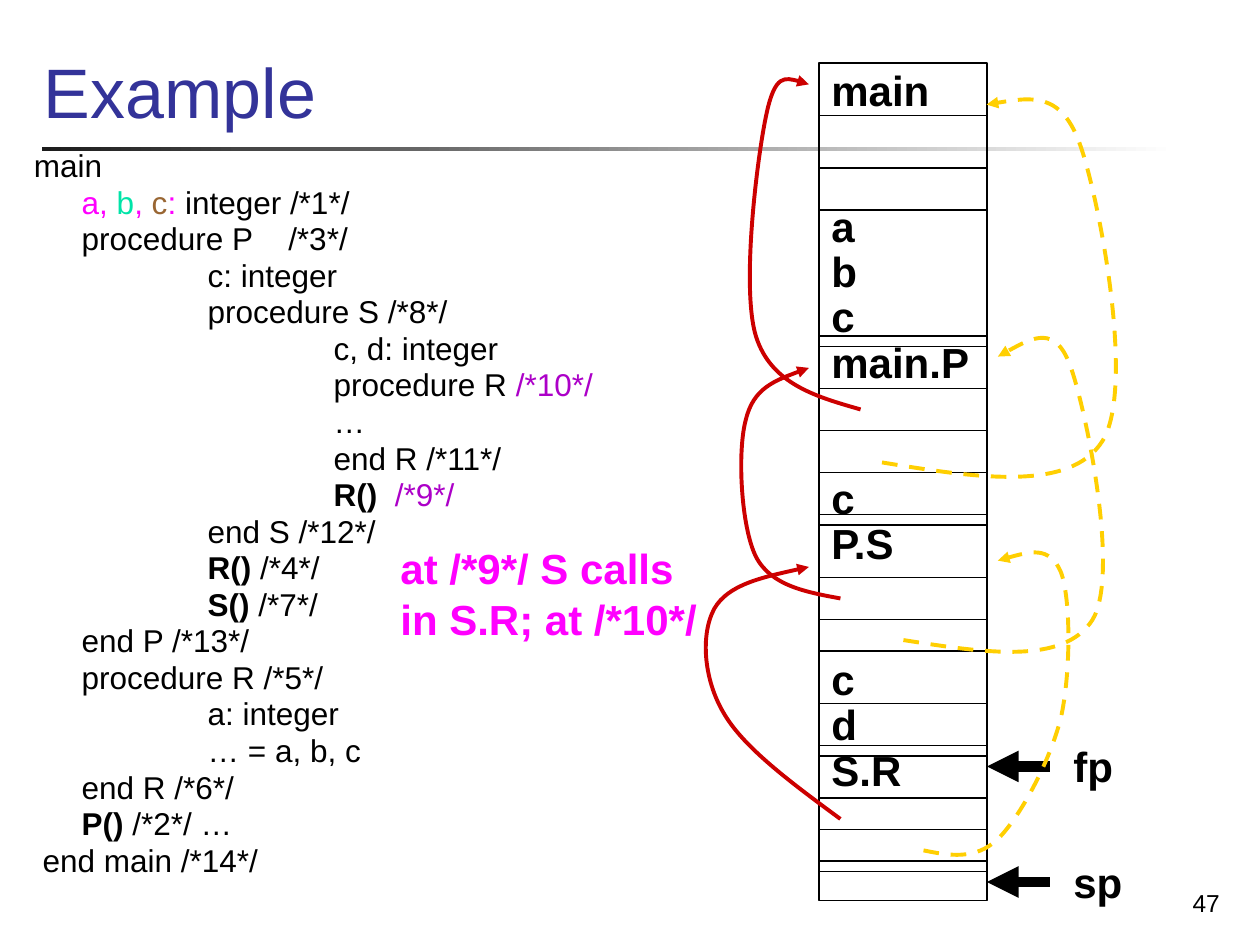
from lxml.etree import SubElement
from pptx import Presentation
from pptx.dml.color import RGBColor
from pptx.enum.dml import MSO_LINE
from pptx.enum.shapes import MSO_CONNECTOR, MSO_SHAPE
from pptx.enum.text import MSO_ANCHOR, PP_ALIGN
from pptx.oxml.ns import qn
from pptx.util import Inches, Pt

BLACK = RGBColor(0x00, 0x00, 0x00)
WHITE = RGBColor(0xFF, 0xFF, 0xFF)
CHARCOAL = RGBColor(0x1C, 0x1C, 0x1C)
NAVY = RGBColor(0x33, 0x33, 0x99)
MAGENTA = RGBColor(0xFF, 0x00, 0xFF)
MINT = RGBColor(0x00, 0xE4, 0xA8)
BROWN = RGBColor(0x99, 0x66, 0x33)
PURPLE = RGBColor(0xAC, 0x00, 0xC8)
RED = RGBColor(0xCC, 0x00, 0x00)
YELLOW = RGBColor(0xFF, 0xCF, 0x01)

# The memory stack sits on a grid of twelfths of an inch
STACK_LEFT, STACK_TOP, STACK_WIDTH, STACK_HEIGHT = 78, 6, 16, 79.8
STACK_RIGHT = STACK_LEFT + STACK_WIDTH
DIVIDER_ROWS = [11, 16, 20, 32, 33, 37, 41, 45, 49, 50, 55, 59, 62, 67,
                71, 72, 76, 79, 82, 83]
STACK_PITCH = 25.9
# (label, empty lines above it)
STACK_LABELS = [("main", 0), ("a", 2), ("b", 0), ("c", 0), ("main.P", 0),
                ("c", 2), ("P.S", 0), ("c", 2), ("d", 0), ("S.R", 0)]
POINTERS = [("fp", 73, 5.83, 0.52), ("sp", 84, 6.75, 0.6)]

# Left margin of each nesting level, in inches
LEVEL_INDENTS = [0, 0.38, 1.38, 2.38]
END_INDENT = 0.07

# (indent, runs); a run is (text, colour, bold, extra letter spacing in points)
CODE = [
    (LEVEL_INDENTS[0], [("main",)]),
    (LEVEL_INDENTS[1], [("a,", MAGENTA), (" b", MINT), (",", MAGENTA),
                        (" c", BROWN), (": ", MAGENTA), ("integer /*1*/",)]),
    (LEVEL_INDENTS[1], [("procedure P",), (" ", BLACK, False, 15), ("/*3*/",)]),
    (LEVEL_INDENTS[2], [("c: integer",)]),
    (LEVEL_INDENTS[2], [("procedure S /*8*/",)]),
    (LEVEL_INDENTS[3], [("c, d: integer",)]),
    (LEVEL_INDENTS[3], [("procedure R ",), ("/*10*/", PURPLE)]),
    (LEVEL_INDENTS[3], [("…",)]),
    (LEVEL_INDENTS[3], [("end R /*11*/",)]),
    (LEVEL_INDENTS[3], [("R()", BLACK, True), (" ", BLACK, True, 5),
                        ("/*9*/", PURPLE)]),
    (LEVEL_INDENTS[2], [("end S /*12*/",)]),
    (LEVEL_INDENTS[2], [("R()", BLACK, True), (" /*4*/",)]),
    (LEVEL_INDENTS[2], [("S()", BLACK, True), (" /*7*/",)]),
    (LEVEL_INDENTS[1], [("end P /*13*/",)]),
    (LEVEL_INDENTS[1], [("procedure R /*5*/",)]),
    (LEVEL_INDENTS[2], [("a: integer",)]),
    (LEVEL_INDENTS[2], [("… = a, b, c",)]),
    (LEVEL_INDENTS[1], [("end R /*6*/",)]),
    (LEVEL_INDENTS[1], [("P()", BLACK, True), (" /*2*/ …",)]),
    (END_INDENT, [("end main /*14*/",)]),
]

# Bezier links: start point, then two control points and an end per segment
CONTROL_LINKS = [
    [(6.83, 3.25), (6.48, 3.15), (6.12, 3.05), (6, 2.67), (5.88, 2.28),
     (6.01, 1.25), (6.08, 0.92), (6.15, 0.58), (6.28, 0.62), (6.42, 0.67)],
    [(6.67, 4.75), (6.4, 4.7), (6.12, 4.65), (6, 4.42), (5.88, 4.18),
     (5.85, 3.58), (5.92, 3.33), (5.98, 3.08), (6.2, 3), (6.42, 2.92)],
    [(6.67, 6.5), (6.29, 6.22), (5.91, 5.94), (5.75, 5.67), (5.58, 5.39),
     (5.56, 5.03), (5.67, 4.83), (5.78, 4.64), (6.1, 4.57), (6.42, 4.5)],
]
ACCESS_LINKS = [
    [(7, 3.67), (7.74, 3.79), (8.49, 3.91), (8.75, 3.5), (9.01, 3.08),
     (8.73, 1.61), (8.58, 1.17), (8.43, 0.72), (8.13, 0.78), (7.83, 0.83)],
    [(7.17, 5.08), (7.81, 5.18), (8.44, 5.28), (8.67, 4.92), (8.89, 4.56),
     (8.62, 3.26), (8.5, 2.92), (8.38, 2.57), (8.15, 2.7), (7.92, 2.83)],
    [(7.33, 6.75), (7.53, 6.79), (7.74, 6.83), (7.92, 6.66), (8.1, 6.48),
     (8.33, 6.05), (8.42, 5.7), (8.5, 5.34), (8.5, 4.75), (8.42, 4.54),
     (8.33, 4.33), (8.12, 4.39), (7.92, 4.45)],
]


def grid(units):
    return Inches(units / 12)


def add_run(paragraph, text, size, color=BLACK, bold=False, spacing=0):
    run = paragraph.add_run()
    run.text = text
    font = run.font
    font.name, font.size, font.bold = "Arial", Pt(size), bold
    font.color.rgb = color
    if spacing:
        run._r.get_or_add_rPr().set("spc", str(spacing * 100))


def add_paragraph(frame, index):
    return frame.add_paragraph() if index else frame.paragraphs[0]


def add_label(slide, box, lines, size, color=BLACK, bold=False, wrap=True,
              anchor=MSO_ANCHOR.TOP, align=PP_ALIGN.LEFT, pitch=None):
    frame = slide.shapes.add_textbox(*map(Inches, box)).text_frame
    frame.word_wrap = wrap
    frame.vertical_anchor = anchor
    for index, line in enumerate(lines):
        paragraph = add_paragraph(frame, index)
        paragraph.alignment = align
        if pitch:
            paragraph.line_spacing = Pt(pitch)
        add_run(paragraph, line, size, color, bold)


def add_arrowhead(shape):
    SubElement(shape.line._get_or_add_ln(), qn("a:tailEnd"), type="triangle")


def add_straight(slide, start, end, width, arrow=False):
    line = slide.shapes.add_connector(MSO_CONNECTOR.STRAIGHT,
                                      *map(grid, start + end))
    line.line.color.rgb = BLACK
    line.line.width = Pt(width)
    if arrow:
        add_arrowhead(line)
    SubElement(line._element.spPr, qn("a:effectLst"))


def add_curve(slide, points, color, dashed=False):
    start, *rest = [(Inches(x), Inches(y)) for x, y in points]
    builder = slide.shapes.build_freeform(*start)
    builder.add_line_segments(rest, close=False)
    curve = builder.convert_to_shape()
    # Merge every three line points into one cubic segment
    segments = list(curve._element.iter(qn("a:lnTo")))
    for first in range(0, len(segments), 3):
        head, *others = segments[first:first + 3]
        head.tag = qn("a:cubicBezTo")
        for other in others:
            head.append(other[0])
            other.getparent().remove(other)
    curve.fill.background()
    curve.line.color.rgb = color
    curve.line.width = Pt(2.25)
    if dashed:
        curve.line.dash_style = MSO_LINE.DASH
    add_arrowhead(curve)
    curve.shadow.inherit = False


def add_title_rule(slide):
    rule = slide.shapes.add_shape(MSO_SHAPE.RECTANGLE, Inches(0.33),
                                  Inches(1.17), Inches(9), Inches(0.03))
    rule.shadow.inherit = False
    rule.line.fill.background()
    rule.fill.gradient()
    rule.fill.gradient_angle = 0
    for stop, color in zip(rule.fill.gradient_stops, (CHARCOAL, WHITE)):
        stop.color.rgb = color


def add_stack(slide):
    stack = slide.shapes.add_shape(MSO_SHAPE.RECTANGLE, *map(
        grid, (STACK_LEFT, STACK_TOP, STACK_WIDTH, STACK_HEIGHT)))
    stack.shadow.inherit = False
    stack.fill.background()
    stack.line.color.rgb = BLACK
    stack.line.width = Pt(0.75)
    frame = stack.text_frame
    frame.word_wrap = True
    frame.vertical_anchor = MSO_ANCHOR.TOP
    for index, (label, gap) in enumerate(STACK_LABELS):
        paragraph = add_paragraph(frame, index)
        paragraph.alignment = PP_ALIGN.LEFT
        paragraph.line_spacing = Pt(STACK_PITCH)
        paragraph.space_before = Pt(gap * STACK_PITCH)
        add_run(paragraph, label, 24, bold=True)
    for row in DIVIDER_ROWS:
        add_straight(slide, (STACK_LEFT, row), (STACK_RIGHT, row), 0.75)


def add_code(slide):
    frame = slide.shapes.add_textbox(Inches(0.17), Inches(1.17), Inches(4.75),
                                     Inches(5.08)).text_frame
    frame.word_wrap = True
    for index, (indent, runs) in enumerate(CODE):
        paragraph = add_paragraph(frame, index)
        paragraph._p.get_or_add_pPr().set("marL", str(Inches(indent)))
        paragraph.line_spacing = Pt(17.3)
        paragraph.space_before = Pt(3.6 if index else 0)
        for text, *style in runs:
            add_run(paragraph, text, 18, *style)


def main():
    deck = Presentation()
    deck.slide_width, deck.slide_height = Inches(10), Inches(7.5)
    slide = deck.slides.add_slide(deck.slide_layouts[6])

    # Heading and page number
    add_title_rule(slide)
    add_label(slide, (7.7, 6.83, 2.08, 0.5), ["47"], 14,
              anchor=MSO_ANCHOR.BOTTOM, align=PP_ALIGN.RIGHT)
    add_label(slide, (0.25, 0, 9.52, 1.1), ["Example"], 40, NAVY,
              anchor=MSO_ANCHOR.BOTTOM)

    # Memory stack with its frame and stack pointers
    add_stack(slide)
    for name, row, top, width in POINTERS:
        add_label(slide, (8.42, top, width, 0.51), [name], 24, bold=True,
                  wrap=False)
        add_straight(slide, (STACK_RIGHT + 6, row), (STACK_RIGHT, row), 6,
                     arrow=True)

    # Links between activation records
    for points in CONTROL_LINKS:
        add_curve(slide, points, RED)
    for points in ACCESS_LINKS:
        add_curve(slide, points, YELLOW, dashed=True)

    # Program text and the current step
    add_label(slide, (3.08, 4.25, 2.59, 0.91),
              ["at /*9*/ S calls", "in S.R; at /*10*/"], 24, MAGENTA,
              bold=True, wrap=False, pitch=29.1)
    add_code(slide)

    deck.save("out.pptx")


if __name__ == "__main__":
    main()
